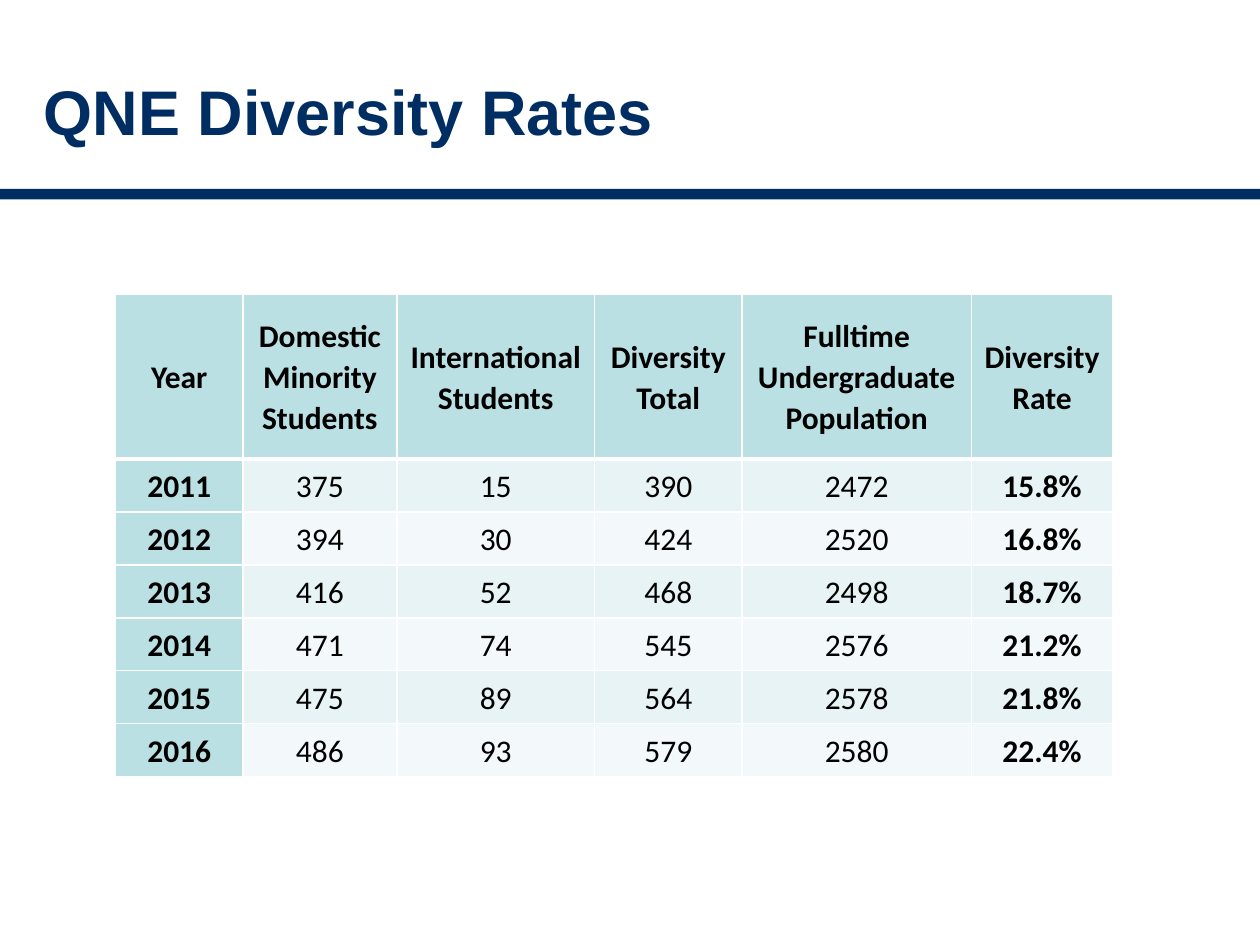
import pptx
import pptx.dml.color
import pptx.enum.shapes
import pptx.enum.text
import pptx.oxml
import pptx.oxml.ns
import pptx.util

Pt = pptx.util.Pt
ALIGN = pptx.enum.text.PP_ALIGN
MIDDLE = pptx.enum.text.MSO_ANCHOR.MIDDLE

HEADS = ["Year", "Domestic Minority Students", "International Students",
         "Diversity Total", "Fulltime\nUndergraduate Population",
         "Diversity Rate"]
RATES = [
    ("2011", "375", "15", "390", "2472", "15.8%"),
    ("2012", "394", "30", "424", "2520", "16.8%"),
    ("2013", "416", "52", "468", "2498", "18.7%"),
    ("2014", "471", "74", "545", "2576", "21.2%"),
    ("2015", "475", "89", "564", "2578", "21.8%"),
    ("2016", "486", "93", "579", "2580", "22.4%"),
]
WIDTHS = [72.9, 87.9, 113.1, 84.2, 131.1, 80.8]
HEIGHTS = [94.3] + [30.25] * len(RATES)


def color(code):
    return pptx.dml.color.RGBColor.from_string(code)


def write(frame, text, font="Calibri", size=18, ink="000000", bold=False,
          align=ALIGN.LEFT, lead=1.0):
    frame.word_wrap = True
    for i, line in enumerate(text.split("\n")):
        para = frame.add_paragraph() if i else frame.paragraphs[0]
        para.alignment = align
        para.line_spacing = lead
        run = para.add_run()
        run.text = line
        run.font.name = font
        run.font.size = Pt(size)
        run.font.bold = bold
        run.font.color.rgb = color(ink)


class Deck:
    navy = "002D62"
    teal = "BBE0E3"
    bands = ("E7F3F4", "F3F9FA")
    white = "FFFFFF"

    def __init__(self, wide, high):
        self.show = pptx.Presentation()
        self.show.slide_width = Pt(wide)
        self.show.slide_height = Pt(high)
        self.slide = self.show.slides.add_slide(self.show.slide_layouts[6])

    def bar(self, *box):
        kind = pptx.enum.shapes.MSO_SHAPE.RECTANGLE
        shape = self.slide.shapes.add_shape(kind, *map(Pt, box))
        shape.shadow.inherit = False
        shape.fill.solid()
        shape.fill.fore_color.rgb = color(self.navy)
        shape.line.fill.background()

    def title(self, text, *box):
        frame = self.slide.shapes.add_textbox(*map(Pt, box)).text_frame
        frame.vertical_anchor = MIDDLE
        write(frame, text, font="Arial", size=36, ink=self.navy, bold=True)

    def edge(self, cell, side, width):
        space = pptx.oxml.ns.nsdecls("a")
        line = pptx.oxml.parse_xml(
            f'<a:ln{side} {space} w="{Pt(width)}"><a:solidFill>'
            f'<a:srgbClr val="{self.white}"/></a:solidFill></a:ln{side}>')
        cell._tc.get_or_add_tcPr().append(line)

    def cell(self, cell, text, row, first, last):
        for side in "LRTB":
            thick = (row, side) in ((0, "B"), (1, "T"))
            self.edge(cell, side, 3 if thick else 1)
        cell.fill.solid()
        tint = self.teal if row == 0 or first else self.bands[(row - 1) % 2]
        cell.fill.fore_color.rgb = color(tint)
        cell.vertical_anchor = MIDDLE
        cell.margin_left = cell.margin_right = Pt(5)
        cell.margin_top = cell.margin_bottom = Pt(0)
        write(cell.text_frame, text, bold=row == 0 or first or last,
              align=ALIGN.CENTER, lead=1.07)

    def table(self, rows, left, top, widths, heights):
        grid = self.slide.shapes.add_table(
            len(rows), len(widths), Pt(left), Pt(top),
            Pt(sum(widths)), Pt(sum(heights))).table
        for col, width in zip(grid.columns, widths):
            col.width = Pt(width)
        for row, height in zip(grid.rows, heights):
            row.height = Pt(height)
        end = len(widths) - 1
        for r, row in enumerate(rows):
            for c, text in enumerate(row):
                self.cell(grid.cell(r, c), text, r, c == 0, c == end)


def main():
    deck = Deck(720, 540)
    deck.bar(0, 108, 720, 6)
    deck.title("QNE Diversity Rates", 18, 18, 678, 90)
    deck.table([HEADS, *RATES], 66, 168, WIDTHS, HEIGHTS)
    deck.show.save("out.pptx")


if __name__ == "__main__":
    main()
